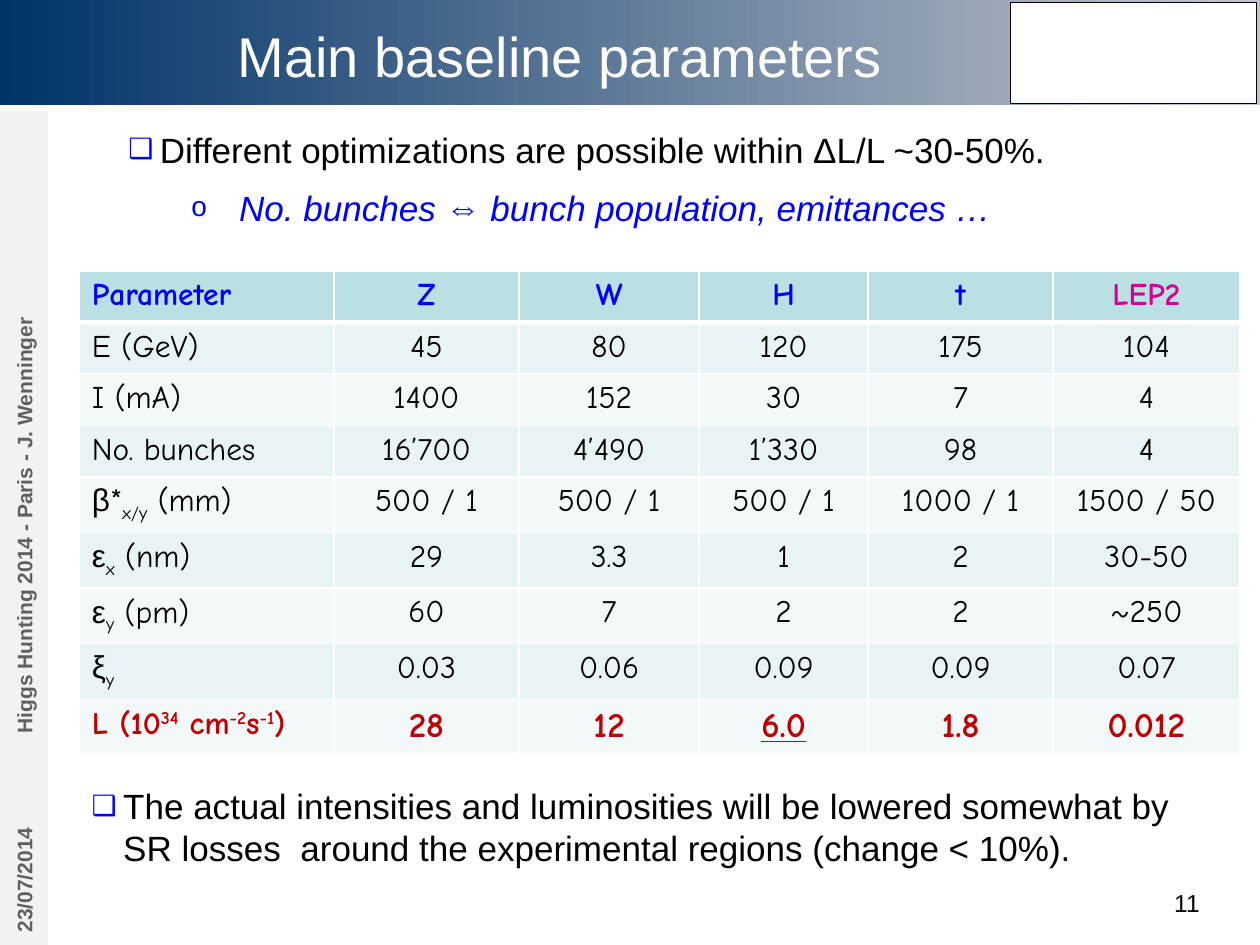
from lxml import etree
from pptx import Presentation
from pptx import util as u
from pptx.dml.color import RGBColor
from pptx.enum import shapes, text
from pptx.oxml import ns

WIDE, HIGH = u.Inches(10), u.Inches(7.5)
SANS, HAND = "Arial", "Comic Neue"

NAVY = RGBColor(0x00, 0x33, 0x68)
SILVER = RGBColor(0xC4, 0xC6, 0xCD)
WHITE = RGBColor(0xFF, 0xFF, 0xFF)
BLACK = RGBColor(0x00, 0x00, 0x00)
BLUE = RGBColor(0x00, 0x00, 0xFF)
PINK = RGBColor(0xD6, 0x00, 0x93)
RED = RGBColor(0xC0, 0x00, 0x00)
GREY = RGBColor(0x60, 0x60, 0x60)
PALE = RGBColor(0xF2, 0xF2, 0xF2)
HEAD = RGBColor(0xBB, 0xE0, 0xE3)
BANDS = [RGBColor(0xE7, 0xF3, 0xF4), RGBColor(0xF3, 0xF9, 0xFA)]

# Table content; a label is a list of (text, baseline shift) parts
SUB, SUP = -25, 30
ROWS = [
    ([("Parameter", 0)], "Z", "W", "H", "t", "LEP2"),
    ([("E (GeV)", 0)], "45", "80", "120", "175", "104"),
    ([("I (mA)", 0)], "1400", "152", "30", "7", "4"),
    ([("No. bunches", 0)], "16’700", "4’490", "1’330", "98", "4"),
    ([("β", 0), ("*", 0), ("x/y", SUB), (" (mm)", 0)],
     "500 / 1", "500 / 1", "500 / 1", "1000 / 1", "1500 / 50"),
    ([("ε", 0), ("x", SUB), (" (nm)", 0)], "29", "3.3", "1", "2", "30-50"),
    ([("ε", 0), ("y", SUB), (" (pm)", 0)], "60", "7", "2", "2", "~250"),
    ([("ξ", 0), ("y", SUB)], "0.03", "0.06", "0.09", "0.09", "0.07"),
    ([("L (10", 0), ("34", SUP), (" cm", 0), ("-2", SUP), ("s", 0),
      ("-1", SUP), (")", 0)], "28", "12", "6.0", "1.8", "0.012"),
]
COLS = [20.2, 14.7, 14.3, 13.4, 14.7, 14.8]


def across(share):
    """Percent of the slide's width."""
    return int(WIDE * share / 100)


def down(share):
    """Percent of the slide's height."""
    return int(HIGH * share / 100)


def place(x, y, w, h):
    return across(x), down(y), across(w), down(h)


def style(font, size, color, name=SANS, bold=False, italic=False):
    font.size, font.name = u.Pt(size), name
    font.bold, font.italic = bold, italic
    font.color.rgb = color


def add_rect(slide, spot):
    rect = slide.shapes.add_shape(shapes.MSO_SHAPE.RECTANGLE, *spot)
    rect.shadow.inherit = False
    rect.line.fill.background()
    return rect


def add_text(slide, spot, words, size, color, align):
    frame = slide.shapes.add_textbox(*spot).text_frame
    frame.word_wrap = True
    frame.text = words
    para = frame.paragraphs[0]
    para.alignment = align
    style(para.runs[0].font, size, color)
    return frame


def add_strip(slide, words, top, high):
    """Side label that reads upwards along the left edge."""
    thick, long = across(3.8), down(high)
    left = (thick - long) // 2
    strip = add_rect(slide, (left, down(top) - left, long, thick))
    strip.rotation = 270
    strip.fill.solid()
    strip.fill.fore_color.rgb = PALE
    frame = strip.text_frame
    frame.text = words
    frame.vertical_anchor = text.MSO_ANCHOR.MIDDLE
    frame.paragraphs[0].alignment = text.PP_ALIGN.LEFT
    style(frame.paragraphs[0].runs[0].font, 12, GREY, bold=True)


def set_bullet(para, mark, left, hang):
    props = para._p.get_or_add_pPr()
    props.set("marL", str(u.Inches(left)))
    props.set("indent", str(-u.Inches(hang)))
    tint = etree.SubElement(props, ns.qn("a:buClr"))
    etree.SubElement(tint, ns.qn("a:srgbClr"), val=str(BLUE))
    etree.SubElement(props, ns.qn("a:buSzPct"), val="80000")
    etree.SubElement(props, ns.qn("a:buFont"), typeface=SANS)
    etree.SubElement(props, ns.qn("a:buChar"), char=mark)


def add_list(slide, spot, items):
    """Bulleted text from (level, words) pairs."""
    frame = slide.shapes.add_textbox(*spot).text_frame
    frame.word_wrap = True
    for i, (level, words) in enumerate(items):
        para = frame.add_paragraph() if i else frame.paragraphs[0]
        para.text, para.level = words, level
        para.space_before = u.Pt(5 if i else 0)
        para.space_after = u.Pt(4)
        if level:
            set_bullet(para, "o", 0.88, 0.38)
        else:
            set_bullet(para, "❑", 0.25, 0.25)
        style(para.runs[0].font, 20, BLUE if level else BLACK,
              italic=level > 0)


def set_edges(cell, base):
    props = cell._tc.get_or_add_tcPr()
    widths = {"lnL": 1, "lnR": 1, "lnT": 1, "lnB": base}
    for i, (side, width) in enumerate(widths.items()):
        line = etree.Element(ns.qn("a:" + side), w=str(u.Pt(width)))
        fill = etree.SubElement(line, ns.qn("a:solidFill"))
        etree.SubElement(fill, ns.qn("a:srgbClr"), val=str(WHITE))
        props.insert(i, line)


def fill_cell(cell, parts, r, c):
    first, last = r == 0, r == len(ROWS) - 1
    cell.fill.solid()
    cell.fill.fore_color.rgb = HEAD if first else BANDS[(r - 1) % 2]
    set_edges(cell, 3 if first else 1)
    para = cell.text_frame.paragraphs[0]
    para.alignment = text.PP_ALIGN.CENTER if c else text.PP_ALIGN.LEFT
    color = RED if last else BLACK
    if first:
        color = PINK if c == len(COLS) - 1 else BLUE
    for words, shift in parts:
        run = para.add_run()
        run.text = words
        style(run.font, 20 if last and c else 18, color,
              SANS if words in "βεξ" else HAND, first or last)
        if shift:
            run.font._element.set("baseline", str(shift * 1000))
        if words == "6.0":
            run.font.underline = True


def add_grid(slide, spot):
    grid = slide.shapes.add_table(len(ROWS), len(COLS), *spot).table
    for col, width in zip(grid.columns, COLS):
        col.width = across(width)
    for r, (label, *values) in enumerate(ROWS):
        cells = [label] + [[(value, 0)] for value in values]
        for c, parts in enumerate(cells):
            fill_cell(grid.cell(r, c), parts, r, c)


def add_banner(slide):
    band = add_rect(slide, place(0, 0, 100, 11.07))
    band.fill.gradient()
    band.fill.gradient_angle = 0
    for stop, color, at in zip(band.fill.gradient_stops, (NAVY, SILVER), (0, 1)):
        stop.color.rgb, stop.position = color, at
    panel = add_rect(slide, place(80.2, 0.27, 19.5, 10.67))
    panel.fill.solid()
    panel.fill.fore_color.rgb = WHITE
    panel.line.color.rgb = BLACK
    panel.line.width = u.Pt(0.75)
    title = add_text(slide, place(8.8, 0, 71.3, 11.73),
                     "Main baseline parameters", 32, WHITE,
                     text.PP_ALIGN.CENTER)
    title.vertical_anchor = text.MSO_ANCHOR.MIDDLE


def main():
    deck = Presentation()
    deck.slide_width, deck.slide_height = WIDE, HIGH
    slide = deck.slides.add_slide(deck.slide_layouts[6])

    # Frame of the slide
    add_banner(slide)
    add_strip(slide, "23/07/2014", 78.93, 21.07)
    add_strip(slide, "Higgs Hunting 2014 - Paris - J. Wenninger", 11.73, 67.2)
    add_text(slide, place(86.2, 93.33, 10, 4.67), "11", 14, BLACK,
             text.PP_ALIGN.RIGHT)

    # Table between two lists
    add_grid(slide, place(6.3, 28.67, sum(COLS), 49.07))
    add_list(slide, place(9.2, 12.93, 79.8, 12), [
        (0, "Different optimizations are possible within ΔL/L ~30-50%."),
        (1, "No. bunches ⇔ bunch population, emittances …")])
    add_list(slide, place(6.3, 82.4, 89.7, 10.27), [
        (0, "The actual intensities and luminosities will be lowered somewhat "
            "by SR losses  around the experimental regions (change < 10%).")])
    deck.save("out.pptx")


if __name__ == "__main__":
    main()
